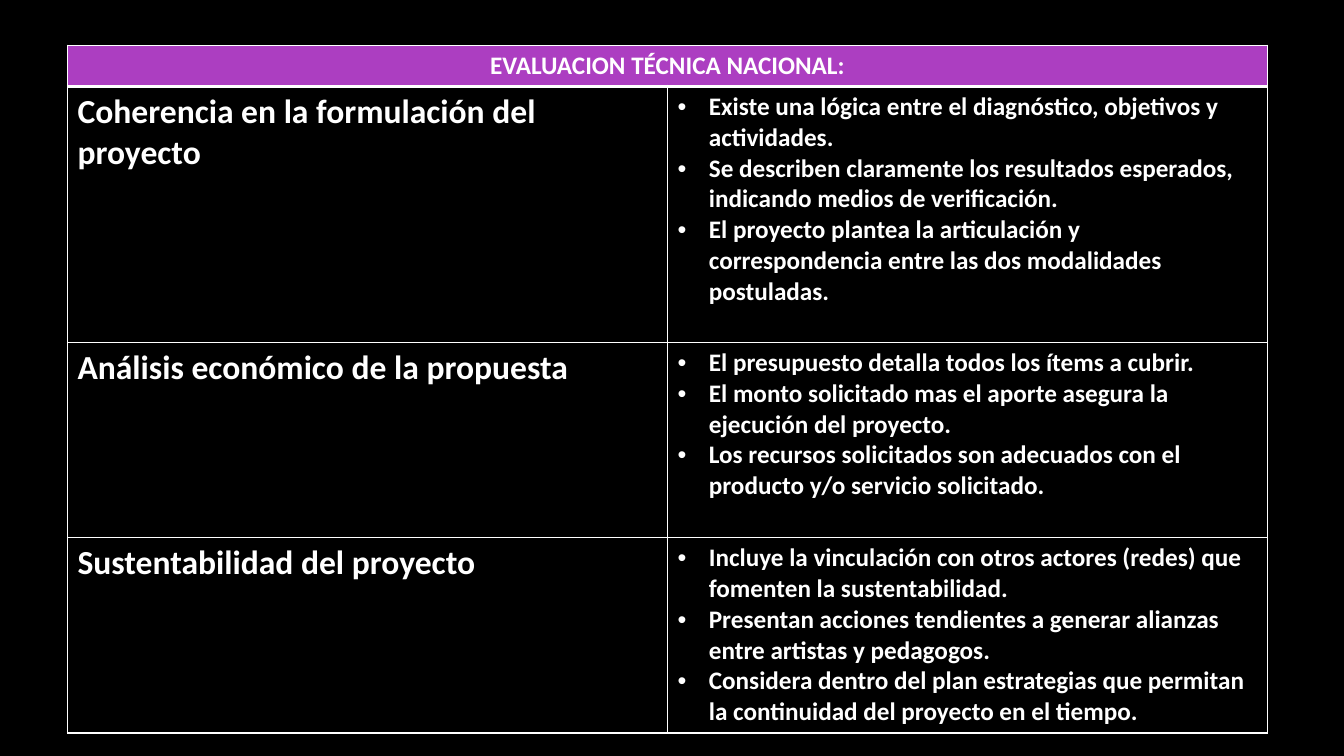
from dataclasses import dataclass
from lxml.etree import SubElement
from pptx import Presentation
from pptx.dml.color import RGBColor as Color
from pptx.enum.text import PP_ALIGN as Align
from pptx.oxml.ns import qn
from pptx.util import Cm, Pt


@dataclass(frozen=True)
class Theme:
    font: str = "Calibri"
    background: str = "000000"
    text: str = "FFFFFF"
    line: str = "FFFFFF"
    header: str = "AC3EC1"
    criterion_size: int = 24
    body_size: int = 18


theme = Theme()
title = "EVALUACION TÉCNICA NACIONAL:"
# Each criterion: name, row height in cm, points assessed
criteria = [
    ("Coherencia en la formulación del proyecto", 6.45, [
        "Existe una lógica entre el diagnóstico, objetivos y actividades.",
        "Se describen claramente los resultados esperados, indicando medios de verificación.",
        "El proyecto plantea la articulación y correspondencia entre las dos modalidades postuladas.",
    ]),
    ("Análisis económico de la propuesta", 4.92, [
        "El presupuesto detalla todos los ítems a cubrir.",
        "El monto solicitado mas el aporte asegura la ejecución del proyecto.",
        "Los recursos solicitados son adecuados con el producto y/o servicio solicitado.",
    ]),
    ("Sustentabilidad del proyecto", 4.92, [
        "Incluye la vinculación con otros actores (redes) que fomenten la sustentabilidad.",
        "Presentan acciones tendientes a generar alianzas entre artistas y pedagogos.",
        "Considera dentro del plan estrategias que permitan la continuidad del proyecto en el tiempo.",
    ]),
]
header_height = 1.04


def write(cell, lines, size, align=Align.LEFT, bullets=False):
    frame = cell.text_frame
    for number, line in enumerate(lines):
        para = frame.add_paragraph() if number else frame.paragraphs[0]
        para.text = line
        para.alignment = align
        if bullets:
            properties = para._p.get_or_add_pPr()
            properties.set("marL", str(Cm(0.79)))
            properties.set("indent", str(-Cm(0.79)))
            SubElement(properties, qn("a:buFont"), typeface="Arial")
            SubElement(properties, qn("a:buChar"), char="•")
        para.font.name = theme.font
        para.font.size = Pt(size)
        para.font.bold = True
        para.font.color.rgb = Color.from_string(theme.text)


def draw_borders(cell, top=1, bottom=1):
    properties = cell._tc.get_or_add_tcPr()
    for side, width in (("L", 1), ("R", 1), ("T", top), ("B", bottom)):
        line = SubElement(properties, qn(f"a:ln{side}"), w=str(Pt(width)))
        fill = SubElement(line, qn("a:solidFill"))
        SubElement(fill, qn("a:srgbClr"), val=theme.line)


# Slide
deck = Presentation()
deck.slide_width, deck.slide_height = Cm(33.87), Cm(19.05)
page = deck.slides.add_slide(deck.slide_layouts[6])
page.background.fill.solid()
page.background.fill.fore_color.rgb = Color.from_string(theme.background)

# Table grid
heights = [header_height] + [height for _, height, _ in criteria]
table = page.shapes.add_table(
    len(heights), 2, Cm(1.7), Cm(1.14), Cm(30.24), Cm(sum(heights))).table
table.first_row = False
table.horz_banding = False
for row, height in zip(table.rows, heights):
    row.height = Cm(height)

# Borders and fills
for index, row in enumerate(table.rows):
    for cell in row.cells:
        draw_borders(cell, top=3 if index == 1 else 1, bottom=3 if index == 0 else 1)
        if index == 0:
            cell.fill.solid()
            cell.fill.fore_color.rgb = Color.from_string(theme.header)
        else:
            cell.fill.background()

# Header
table.cell(0, 0).merge(table.cell(0, 1))
write(table.cell(0, 0), [title], theme.body_size, Align.CENTER)

# Criteria
for index, (name, _, points) in enumerate(criteria, start=1):
    write(table.cell(index, 0), [name], theme.criterion_size)
    write(table.cell(index, 1), points, theme.body_size, bullets=True)

deck.save("out.pptx")
